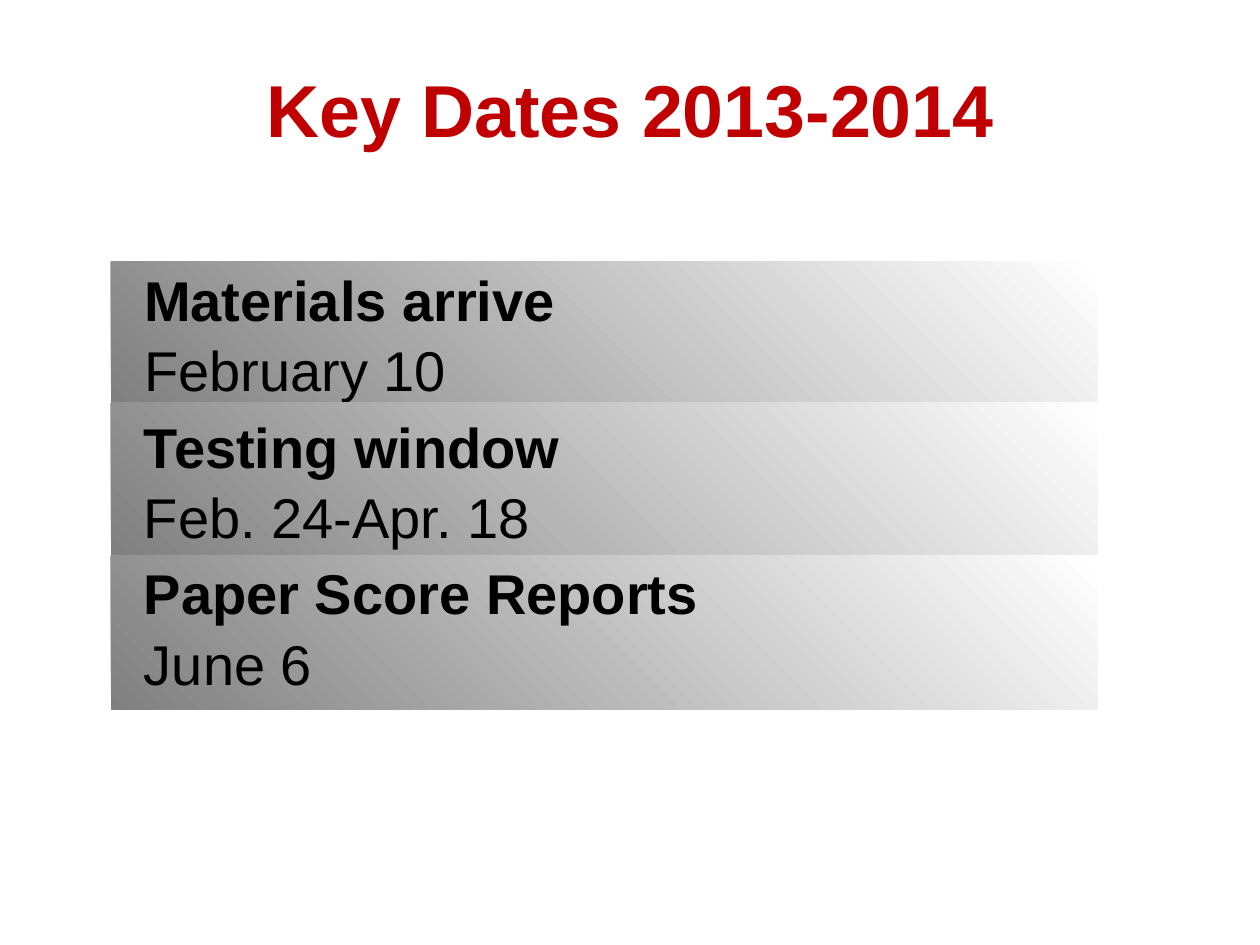
from dataclasses import dataclass

from pptx import Presentation
from pptx.dml.color import RGBColor
from pptx.enum.shapes import MSO_SHAPE
from pptx.enum.text import MSO_ANCHOR, PP_ALIGN
from pptx.util import Emu, Inches, Pt

PX = Inches(1) // 126


@dataclass(frozen=True)
class Theme:
    font: str = "Arial"
    title_size: int = 42
    body_size: int = 32
    title_color: str = "C00000"
    body_color: str = "000000"
    band_colors: tuple = ("808080", "FFFFFF")


THEME = Theme()
BAND_LEFT, BAND_WIDTH = 111, 987
LABEL_LEFT = 144
# event, date, band top, band height, label width, label height
KEY_DATES = [
    ("Materials arrive ", "February 10", 262, 141, 460, 141),
    ("Testing window ", "Feb. 24-Apr. 18", 403, 153, 490, 153),
    ("Paper Score Reports ", "June 6", 556, 154, 596, 140),
]


def px(*lengths):
    return [Emu(length * PX) for length in lengths]


def add_band(slide, top, height):
    band = slide.shapes.add_shape(
        MSO_SHAPE.RECTANGLE, *px(BAND_LEFT, top, BAND_WIDTH, height))
    band.shadow.inherit = False
    band.line.fill.background()
    band.fill.gradient()
    band.fill.gradient_angle = 45
    for stop, color, position in zip(band.fill.gradient_stops, THEME.band_colors, (0, 1)):
        stop.color.rgb = RGBColor.from_string(color)
        stop.position = position


def add_text(slide, box, runs, size, color, anchor, **paragraph_format):
    """Write one paragraph from (text, bold) runs in a box without margins."""
    frame = slide.shapes.add_textbox(*px(*box)).text_frame
    frame_format = dict(word_wrap=True, vertical_anchor=anchor, margin_left=0,
                        margin_top=0, margin_right=0, margin_bottom=0)
    for name, value in frame_format.items():
        setattr(frame, name, value)
    paragraph = frame.paragraphs[0]
    for name, value in paragraph_format.items():
        setattr(paragraph, name, value)
    for text, bold in runs:
        run = paragraph.add_run()
        run.text = text
        run.font.color.rgb = RGBColor.from_string(color)
        for name, value in dict(name=THEME.font, size=Pt(size), bold=bold).items():
            setattr(run.font, name, value)


def main():
    presentation = Presentation()
    presentation.slide_width, presentation.slide_height = px(1260, 945)
    slide = presentation.slides.add_slide(presentation.slide_layouts[6])

    add_text(slide, (63, 63, 1134, 89), [("Key Dates 2013-2014", True)],
             THEME.title_size, THEME.title_color, MSO_ANCHOR.BOTTOM,
             alignment=PP_ALIGN.CENTER)
    for event, date, top, band_height, label_width, label_height in KEY_DATES:
        add_band(slide, top, band_height)
        add_text(slide, (LABEL_LEFT, top, label_width, label_height),
                 [(event, True), (date, False)],
                 THEME.body_size, THEME.body_color, MSO_ANCHOR.MIDDLE,
                 line_spacing=1.05)
    presentation.save("out.pptx")


if __name__ == "__main__":
    main()
